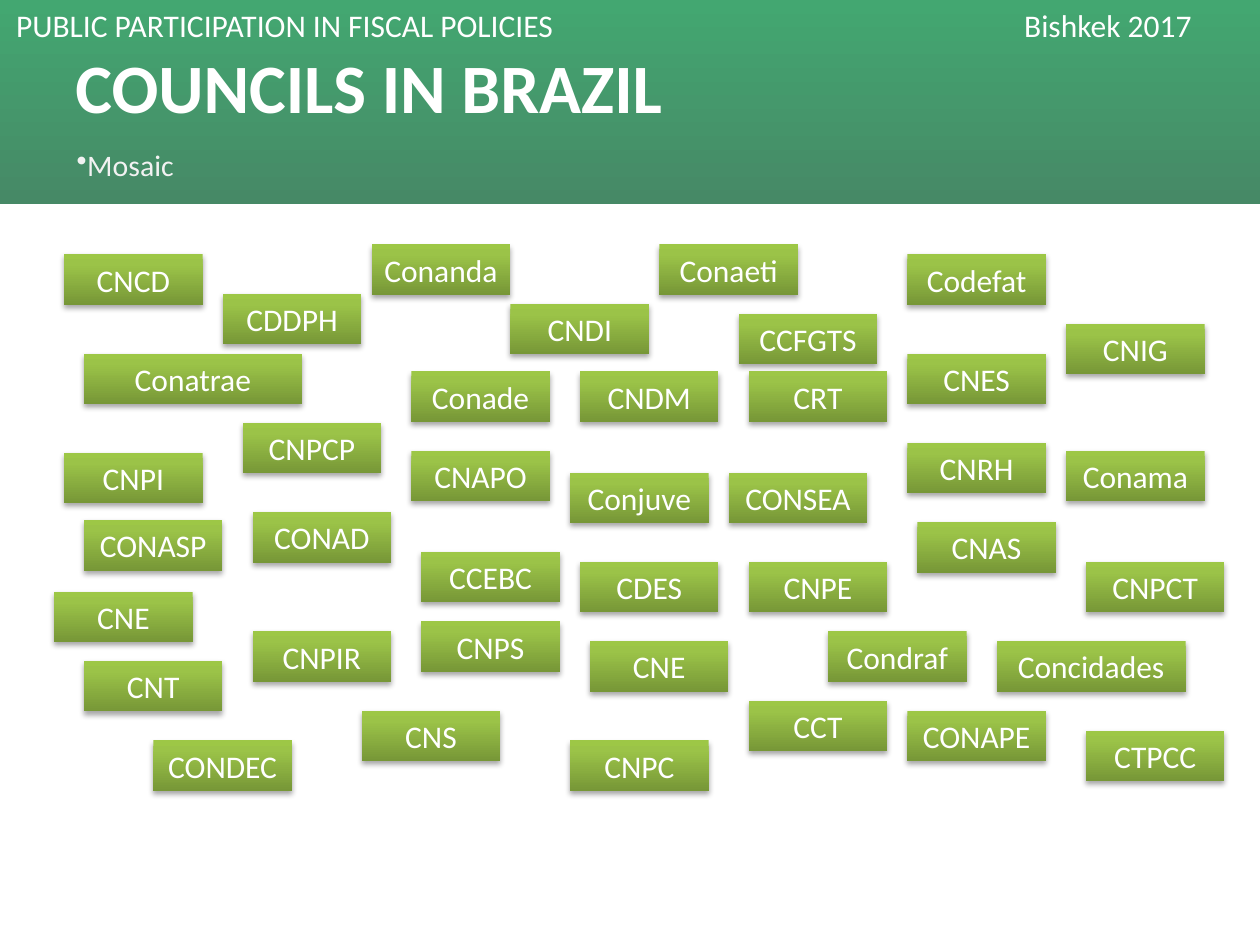
import pptx
import pptx.dml.color
import pptx.enum.shapes
import pptx.enum.text
import pptx.oxml
import pptx.oxml.ns
import pptx.util

# Content
EVENT, VENUE = "PUBLIC PARTICIPATION IN FISCAL POLICIES", "Bishkek 2017"
TITLE = "COUNCILS IN BRAZIL"
SUBTITLE = "Mosaic"

# Council name, column and row on the mosaic grid
COUNCILS = [
    ("CNCD", 1, 1), ("CDDPH", 17, 5), ("Conanda", 32, 0), ("CNDI", 46, 6),
    ("Conaeti", 61, 0), ("CCFGTS", 69, 7), ("Codefat", 86, 1),
    ("Conatrae", 3, 11), ("Conade", 36, 12.8), ("CNDM", 53, 12.8),
    ("CRT", 70, 12.8), ("CNES", 86, 11), ("CNIG", 102, 8),
    ("CNPI", 1, 21), ("CNPCP", 19, 18), ("CNAPO", 36, 20.8),
    ("Conjuve", 52, 23), ("CONSEA", 68, 23), ("CNRH", 86, 20),
    ("Conama", 102, 20.8), ("CONASP", 3, 27.8), ("CONAD", 20, 27),
    ("CCEBC", 37, 31), ("CDES", 53, 32), ("CNPE", 70, 32),
    ("CNAS", 87, 28), ("CNPCT", 104, 32), ("CNE", 0, 35),
    ("CNPIR", 20, 39), ("CNPS", 37, 38), ("CNE", 54, 40),
    ("Condraf", 78, 39), ("Concidades", 95, 40), ("CNT", 3, 42),
    ("CONDEC", 10, 50), ("CNS", 31, 47), ("CNPC", 52, 50),
    ("CCT", 70, 46), ("CONAPE", 86, 47), ("CTPCC", 104, 49),
]

THEME = {
    "font": "Calibri",
    "white": "FFFFFF", "soft white": "F2F2F2",
    "banner": [(0, "43A771"), (100, "468966")],
    "tile": [(0, "9DC746"), (20, "9BC348"), (100, "779737")],
    "title size": 39.6, "subtitle size": 17, "body size": 18,
}

# Mosaic grid, in inches: one step is 2 mm
STEP = 2 / 25.4
GRID_LEFT, GRID_TOP = 0.43, 1.94
TILE_WIDTH, TILE_HEIGHT = 1.1, 0.4
WIDE_TILES = {"Conatrae": 1.73, "Concidades": 1.5}

ANCHOR = pptx.enum.text.MSO_ANCHOR
ALIGN = pptx.enum.text.PP_ALIGN


def drawing_xml(body):
    """Parse one DrawingML element; body is its markup without namespace."""
    tag, rest = body.split(" ", 1)
    namespace = pptx.oxml.ns.nsdecls("a")
    return pptx.oxml.parse_xml(f"{tag} {namespace} {rest}")


def write(shape, text, size, color=THEME["white"], bold=False,
          align=ALIGN.LEFT, anchor=ANCHOR.MIDDLE):
    frame = shape.text_frame
    frame.word_wrap = True
    frame.vertical_anchor = anchor
    paragraph = frame.paragraphs[0]
    paragraph.alignment = align
    run = paragraph.add_run()
    run.text = text
    run.font.name = THEME["font"]
    run.font.size = pptx.util.Pt(size)
    run.font.bold = bold
    run.font.color.rgb = pptx.dml.color.RGBColor.from_string(color)
    return paragraph


def box(slide, left, top, width, height):
    place = map(pptx.util.Inches, (left, top, width, height))
    return slide.shapes.add_textbox(*place)


def gradient_rectangle(slide, left, top, width, height, stops):
    place = map(pptx.util.Inches, (left, top, width, height))
    rectangle = slide.shapes.add_shape(
        pptx.enum.shapes.MSO_SHAPE.RECTANGLE, *place)
    rectangle.line.fill.background()
    rectangle.shadow.inherit = False
    marks = "".join(
        f'<a:gs pos="{share * 1000}"><a:srgbClr val="{color}"/></a:gs>'
        for share, color in stops)
    fill = drawing_xml(
        f'<a:gradFill rotWithShape="1"><a:gsLst>{marks}</a:gsLst>'
        '<a:lin ang="5400000" scaled="0"/></a:gradFill>')
    outline = rectangle._element.spPr.find(pptx.oxml.ns.qn("a:ln"))
    outline.addprevious(fill)
    return rectangle


def add_shadow(shape):
    effects = shape._element.spPr.find(pptx.oxml.ns.qn("a:effectLst"))
    effects.append(drawing_xml(
        '<a:outerShdw blurRad="40000" dist="23000" dir="5400000" '
        'rotWithShape="0"><a:srgbClr val="000000"><a:alpha val="35000"/>'
        '</a:srgbClr></a:outerShdw>'))


def main():
    deck = pptx.Presentation()
    deck.slide_width = pptx.util.Inches(10)
    deck.slide_height = pptx.util.Inches(7.5)
    slide = deck.slides.add_slide(deck.slide_layouts[6])

    # Banner with the event line
    gradient_rectangle(slide, 0, 0, 10, 1.62, THEME["banner"])
    event = write(box(slide, 0.03, 0, 9.78, 0.4), f"{EVENT}\t{VENUE}",
                  THEME["body size"], anchor=ANCHOR.TOP)
    venue_stop = pptx.util.Inches(8)
    event._p.get_or_add_pPr().append(drawing_xml(
        f'<a:tabLst ><a:tab pos="{venue_stop}" algn="l"/></a:tabLst>'))

    # Subtitle with its bullet
    subtitle = write(box(slide, 0.51, 1.07, 8.98, 0.47), SUBTITLE,
                     THEME["subtitle size"], color=THEME["soft white"])
    subtitle._p.get_or_add_pPr().append(drawing_xml('<a:buChar char="•"/>'))

    # Mosaic of councils
    for council, column, row in COUNCILS:
        tile = gradient_rectangle(
            slide, GRID_LEFT + column * STEP, GRID_TOP + row * STEP,
            WIDE_TILES.get(council, TILE_WIDTH), TILE_HEIGHT, THEME["tile"])
        add_shadow(tile)
        write(tile, council, THEME["body size"], align=ALIGN.CENTER,
              anchor=ANCHOR.TOP)

    # Title
    write(box(slide, 0.5, 0.3, 9, 0.77), TITLE, THEME["title size"], bold=True)

    deck.save("out.pptx")


if __name__ == "__main__":
    main()
